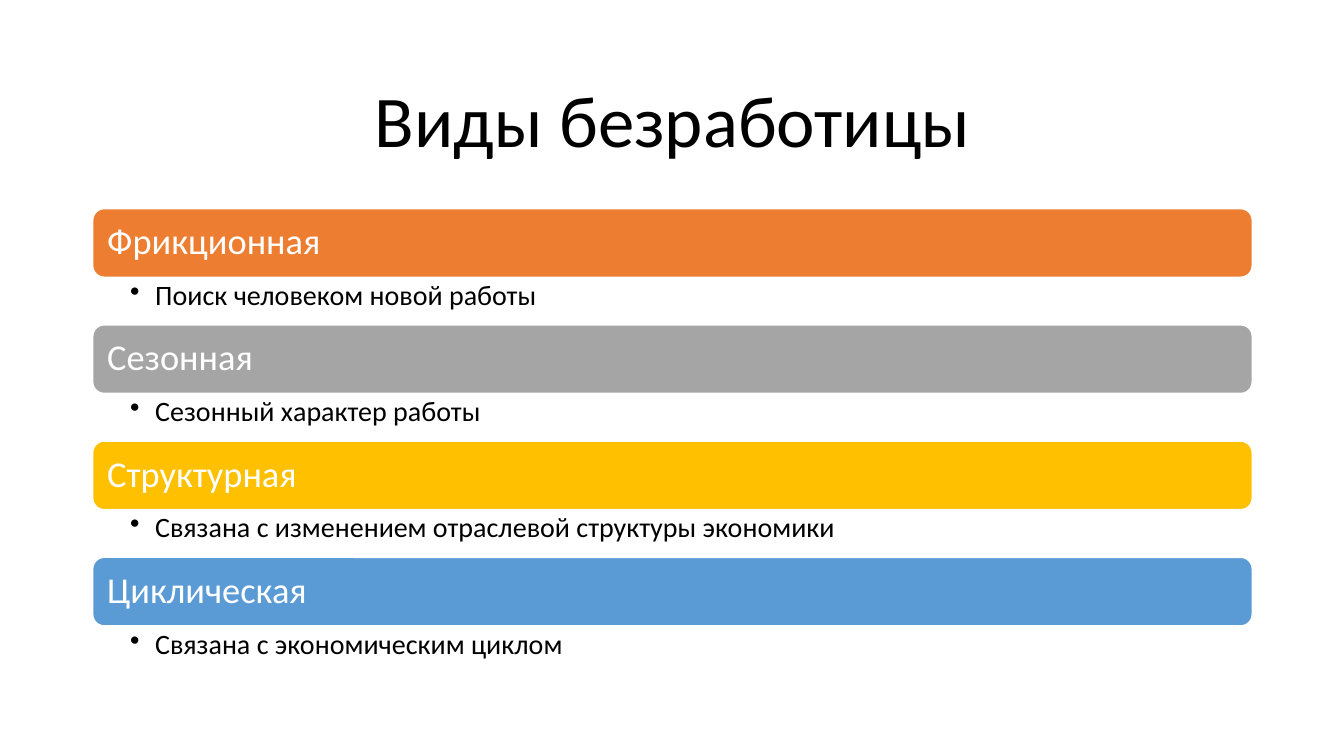
import pptx
import pptx.util
import pptx.dml.color
import pptx.enum.shapes
import pptx.enum.text
import lxml.etree

Inches, Pt = pptx.util.Inches, pptx.util.Pt
RGBColor = pptx.dml.color.RGBColor
ANCHOR = pptx.enum.text.MSO_ANCHOR
ALIGN = pptx.enum.text.PP_ALIGN

BLACK = RGBColor(0x00, 0x00, 0x00)
WHITE = RGBColor(0xFF, 0xFF, 0xFF)
ORANGE = RGBColor(0xED, 0x7D, 0x31)
GRAY = RGBColor(0xA5, 0xA5, 0xA5)
GOLD = RGBColor(0xFF, 0xC0, 0x00)
BLUE = RGBColor(0x5B, 0x9B, 0xD5)

# Grid: one column, four rows, each a bar with a note below it
LEFT, WIDTH = 0.92, 11.5
TOP, ROW_H, BAR_H = 2.07, 1.153, 0.68
NOTE_H = ROW_H - BAR_H

TYPES = [
    ("Фрикционная", "Поиск человеком новой работы", ORANGE),
    ("Сезонная", "Сезонный характер работы", GRAY),
    ("Структурная", "Связана с изменением отраслевой структуры экономики", GOLD),
    ("Циклическая", "Связана с экономическим циклом", BLUE),
]


def put_text(sp, text, size, color, align, anchor, insets):
    tf = sp.text_frame
    left, top, right, bottom = (Inches(v) for v in insets)
    frame_format = {"word_wrap": True, "vertical_anchor": anchor,
                    "margin_left": left, "margin_top": top,
                    "margin_right": right, "margin_bottom": bottom}
    for name, value in frame_format.items():
        setattr(tf, name, value)
    p = tf.paragraphs[0]
    p.alignment, p.line_spacing = align, 0.9
    r = p.add_run()
    r.text = text
    for name, value in {"name": "Calibri", "size": Pt(size)}.items():
        setattr(r.font, name, value)
    r.font.color.rgb = color
    return p


prs = pptx.Presentation()
prs.slide_width, prs.slide_height = Inches(13.33), Inches(7.5)
s = prs.slides.add_slide(prs.slide_layouts[6])

# Title
sp = s.shapes.add_textbox(Inches(LEFT), Inches(0.61), Inches(WIDTH), Inches(1.24))
put_text(sp, "Виды безработицы", 52, BLACK, ALIGN.CENTER, ANCHOR.MIDDLE,
         (0.1, 0.05, 0.1, 0.05))

for i, (kind, note, color) in enumerate(TYPES):
    top = TOP + i * ROW_H

    # Coloured bar with the kind of unemployment
    sp = s.shapes.add_shape(pptx.enum.shapes.MSO_SHAPE.ROUNDED_RECTANGLE,
                            Inches(LEFT), Inches(top), Inches(WIDTH), Inches(BAR_H))
    sp.shadow.inherit = False
    sp.fill.solid()
    sp.fill.fore_color.rgb = color
    sp.line.color.rgb = WHITE
    sp.line.width = Pt(1)
    put_text(sp, kind, 26, WHITE, ALIGN.LEFT, ANCHOR.MIDDLE, (0.11,) * 4)

    # Bulleted note
    sp = s.shapes.add_textbox(Inches(LEFT), Inches(top + BAR_H),
                              Inches(WIDTH), Inches(NOTE_H))
    p = put_text(sp, note, 20, BLACK, ALIGN.LEFT, ANCHOR.TOP, (0.37, 0.04, 0.2, 0.04))
    p.level = 1
    pPr = p._p.get_or_add_pPr()
    pPr.set("marL", str(Inches(0.25)))
    pPr.set("indent", str(-Inches(0.25)))
    bullet = lxml.etree.SubElement(pPr, pptx.oxml.ns.qn("a:buChar"))
    bullet.set("char", "•")

prs.save("out.pptx")
